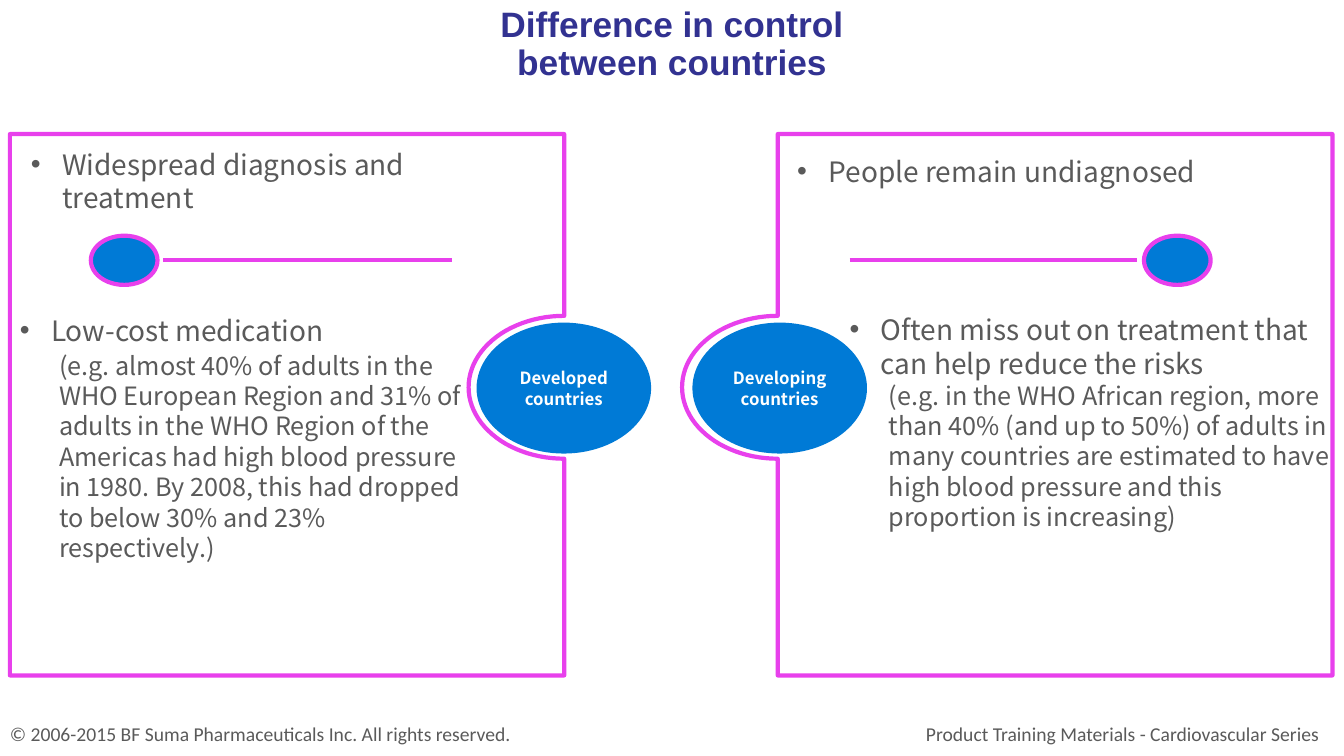
from dataclasses import dataclass
from math import cos, pi, sin

from lxml.etree import SubElement
from pptx import Presentation
from pptx.dml.color import RGBColor
from pptx.enum.shapes import MSO_CONNECTOR as CONN, MSO_SHAPE as SHAPE
from pptx.enum.text import MSO_ANCHOR as ANCHOR, PP_ALIGN as ALIGN
from pptx.oxml.ns import qn
from pptx.util import Cm, Pt


@dataclass(frozen=True)
class Theme:
    title: RGBColor = RGBColor(0x32, 0x32, 0x91)
    text: RGBColor = RGBColor(0x5A, 0x5A, 0x5A)
    frame: RGBColor = RGBColor(0xE8, 0x40, 0xEC)
    fill: RGBColor = RGBColor(0x00, 0x7A, 0xD6)
    label: RGBColor = RGBColor(0xFF, 0xFF, 0xFF)
    title_font: str = "Arial"
    body_font: str = "Noto Sans CJK SC"
    footer_font: str = "Calibri"
    title_size: float = 25.2
    point_size: float = 20
    detail_size: float = 18
    footer_size: float = 14
    label_size: float = 12
    rule: float = 3


THEME = Theme()


def write(p, text, *, size, color=THEME.text, font=THEME.body_font, bold=False,
          align=ALIGN.LEFT, spacing=None, before=0, indent=0, bullet=False):
    pPr = p._p.get_or_add_pPr()
    if bullet:
        SubElement(pPr, qn("a:buFont")).set("typeface", "Arial")
        SubElement(pPr, qn("a:buChar")).set("char", "•")
    if indent:
        pPr.set("marL", str(Cm(indent)))
        pPr.set("indent", str(-Cm(indent) if bullet else 0))
    p.alignment = align
    p.space_before = Pt(before)
    if spacing:
        p.line_spacing = spacing
    for i, line in enumerate(text.split("\n")):
        if i:
            p.add_line_break()
        r = p.add_run()
        r.text = line
        r.font.name, r.font.size, r.font.bold = font, Pt(size), bold
        r.font.color.rgb = color
        ea = SubElement(r._r.get_or_add_rPr(), qn("a:ea"))
        ea.set("typeface", font)


def text_box(s, x, y, w, h):
    tf = s.shapes.add_textbox(Cm(x), Cm(y), Cm(w), Cm(h)).text_frame
    tf.word_wrap = True
    return tf


def points(s, x, y, w, h, heading, detail=None, gap=0):
    tf = text_box(s, x, y, w, h)
    write(tf.paragraphs[0], heading, size=THEME.point_size, indent=0.79,
          bullet=True, spacing=Pt(24))
    if detail:
        write(tf.add_paragraph(), detail, size=THEME.detail_size, indent=0.99,
              spacing=Pt(21.7), before=gap)


def outline(sp):
    sp.line.color.rgb = THEME.frame
    sp.line.width = Pt(THEME.rule)


def notched_panel(s, left, right, notch_x):
    top, bottom, mid, rx, ry, steps = 3.38, 17.02, 9.76, 2.41, 1.8, 48
    arc = [(notch_x - rx * sin(pi * i / steps), mid - ry * cos(pi * i / steps))
           for i in range(steps + 1)]
    if notch_x == right:
        outer = [(right, bottom), (left, bottom), (left, top), (right, top)]
    else:
        outer = [(left, bottom), (right, bottom), (right, top), (left, top)]
    start, *rest = [(Cm(x), Cm(y)) for x, y in arc + outer]
    fb = s.shapes.build_freeform(*start)
    fb.add_line_segments(rest, close=True)
    sp = fb.convert_to_shape()
    sp.shadow.inherit = False
    sp.fill.background()
    outline(sp)


def oval(s, x, y, w, h):
    sp = s.shapes.add_shape(SHAPE.OVAL, Cm(x), Cm(y), Cm(w), Cm(h))
    sp.shadow.inherit = False
    sp.fill.solid()
    sp.fill.fore_color.rgb = THEME.fill
    return sp


def country_label(s, x, text):
    sp = oval(s, x, 8.13, 4.4, 3.3)
    sp.line.fill.background()
    tf = sp.text_frame
    tf.word_wrap = True
    tf.vertical_anchor = ANCHOR.MIDDLE
    tf.margin_left = tf.margin_right = tf.margin_top = tf.margin_bottom = 0
    write(tf.paragraphs[0], text, size=THEME.label_size, color=THEME.label,
          bold=True, align=ALIGN.CENTER, spacing=Pt(14.6))


def divider(s, x1, x2, dot_x):
    y = 6.55
    cx = s.shapes.add_connector(CONN.STRAIGHT, Cm(x1), Cm(y), Cm(x2), Cm(y))
    outline(cx)
    SubElement(cx._element.spPr, qn("a:effectLst"))
    outline(oval(s, dot_x, 5.94, 1.68, 1.24))


def footer(s, x, w, text, align):
    tf = text_box(s, x, 18.06, w, 0.86)
    write(tf.paragraphs[0], text, size=THEME.footer_size,
          font=THEME.footer_font, align=align)


def main():
    prs = Presentation()
    prs.slide_width, prs.slide_height = Cm(33.87), Cm(19.05)
    s = prs.slides.add_slide(prs.slide_layouts[6])

    footer(s, 19.05, 14.45, "Product Training Materials - Cardiovascular Series", ALIGN.RIGHT)
    footer(s, 0, 17.73, "© 2006-2015 BF Suma Pharmaceuticals Inc. All rights reserved.",
           ALIGN.LEFT)
    title = text_box(s, 9.53, 0.05, 14.81, 1.75)
    write(title.paragraphs[0], "Difference in control\nbetween countries",
          size=THEME.title_size, color=THEME.title, font=THEME.title_font,
          bold=True, align=ALIGN.CENTER, spacing=0.9)

    notched_panel(s, 0.25, 14.22, notch_x=14.22)
    notched_panel(s, 19.6, 33.58, notch_x=19.6)
    country_label(s, 12.01, "Developed countries")
    country_label(s, 17.45, "Developing countries")
    divider(s, 4.11, 11.38, dot_x=2.29)
    divider(s, 21.41, 28.65, dot_x=28.83)

    points(s, 0.53, 3.58, 12.85, 1.12, "Widespread diagnosis and treatment")
    points(s, 19.84, 3.76, 13.77, 1.12, "People remain undiagnosed")
    points(s, 0.25, 7.77, 11.63, 5.82, "Low-cost medication",
           "(e.g. almost 40% of adults in the WHO European Region and 31% of adults "
           "in the WHO Region of the Americas had high blood pressure in 1980. "
           "By 2008, this had dropped to below 30% and 23% respectively.)", gap=2)
    points(s, 21.16, 7.75, 13.13, 5.05,
           "Often miss out on treatment that can help reduce the risks",
           "(e.g. in the WHO African region, more than 40% (and up to 50%) of adults "
           "in many countries are estimated to have high blood pressure and this "
           "proportion is increasing)")

    prs.save("out.pptx")


if __name__ == "__main__":
    main()
